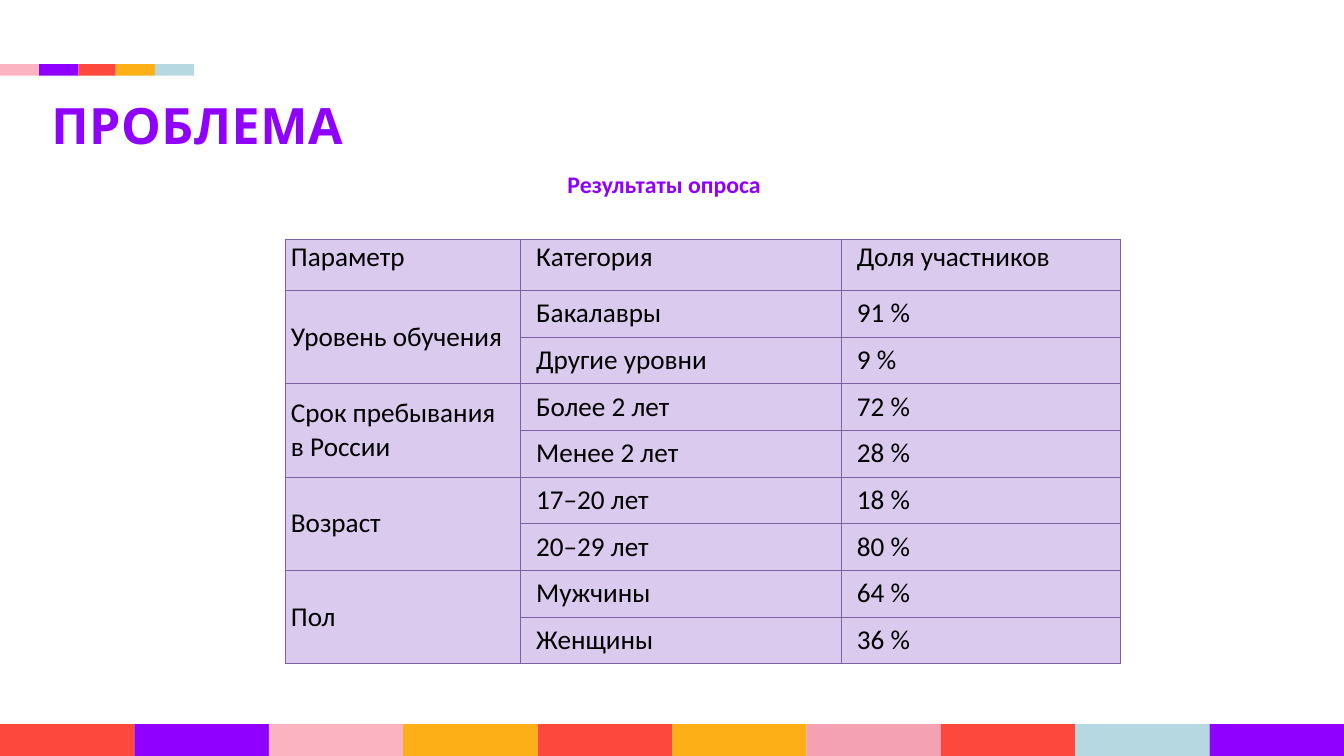
import pptx
import pptx.util
import pptx.dml.color
import pptx.enum.shapes
import pptx.enum.text
import pptx.oxml.ns
from lxml import etree

Cm, Pt = pptx.util.Cm, pptx.util.Pt
Text = pptx.enum.text

HEX = {
    "red": "FD493D", "violet": "8F00FF", "pink": "FBB3C1", "rose": "F4A1B3",
    "amber": "FCAF17", "sky": "B5D8E1", "lilac": "D9CAEE", "rule": "7D60A0",
    "black": "000000",
}
TITLE = "ПРОБЛЕМА"
LABEL = "Результаты опроса"
HEAD = ("Параметр", "Категория", "Доля участников")
GROUPS = [
    ("Уровень обучения", [("Бакалавры", "91 %"), ("Другие уровни", "9 %")]),
    ("Срок пребывания в России", [("Более 2 лет", "72 %"), ("Менее 2 лет", "28 %")]),
    ("Возраст", [("17–20 лет", "18 %"), ("20–29 лет", "80 %")]),
    ("Пол", [("Мужчины", "64 %"), ("Женщины", "36 %")]),
]
STRIP = ["red", "violet", "pink", "amber", "red", "amber", "rose", "red", "sky", "violet"]
ACCENT = [("pink", 1.63), ("violet", 1.63), ("red", 1.55), ("amber", 1.63), ("sky", 1.63)]
WIDE, HIGH = 55.85, 31.42
COLS = (9.8, 13.33, 11.58)
HEAD_H, ROW_H = 2.13, 1.94


def color(name):
    return pptx.dml.color.RGBColor.from_string(HEX[name])


def place(shape, left, top, width, height):
    shape.left, shape.top = Cm(left), Cm(top)
    shape.width, shape.height = Cm(width), Cm(height)


def style(para, name, size, ink, bold=False):
    for run in para.runs:
        run.font.name, run.font.size, run.font.bold = name, Pt(size), bold
        run.font.color.rgb = color(ink)


def inset(box, left, top, right, bottom):
    box.margin_left, box.margin_top = Cm(left), Cm(top)
    box.margin_right, box.margin_bottom = Cm(right), Cm(bottom)


def band(slide, tiles, top, height):
    left = 0
    for name, width in tiles:
        tile = slide.shapes.add_shape(
            pptx.enum.shapes.MSO_SHAPE.RECTANGLE,
            Cm(left), Cm(top), Cm(width), Cm(height))
        tile.shadow.inherit = False
        tile.fill.solid()
        tile.fill.fore_color.rgb = color(name)
        tile.line.fill.background()
        left += width


def border(cell):
    props = cell._tc.get_or_add_tcPr()
    for spot, side in enumerate(("lnL", "lnR", "lnT", "lnB")):
        line = etree.Element(pptx.oxml.ns.qn("a:" + side), w=str(Pt(0.75)))
        fill = etree.SubElement(line, pptx.oxml.ns.qn("a:solidFill"))
        etree.SubElement(fill, pptx.oxml.ns.qn("a:srgbClr"), val=HEX["rule"])
        props.insert(spot, line)


def fill_cell(cell, text, col, row):
    cell.text_frame.text = text
    cell.vertical_anchor = Text.MSO_ANCHOR.MIDDLE
    inset(cell, 0.64 if col else 0.25, 0.2, 0.64, 0.2)
    cell.fill.solid()
    cell.fill.fore_color.rgb = color("lilac")
    border(cell)
    para = cell.text_frame.paragraphs[0]
    if row == 0:
        para.line_spacing = Pt(21)
    style(para, "Calibri", 32, "black")


def main():
    deck = pptx.Presentation()
    deck.slide_width, deck.slide_height = Cm(WIDE), Cm(HIGH)
    slide = deck.slides.add_slide(deck.slide_layouts[5])

    # Colour bands
    band(slide, [(name, WIDE / len(STRIP)) for name in STRIP], 30.1, 1.32)
    band(slide, ACCENT, 2.67, 0.48)

    # Title
    title = slide.shapes.title
    place(title, 2.03, 3.86, 16.99, 2.69)
    frame = title.text_frame
    frame.text = TITLE
    frame.vertical_anchor = Text.MSO_ANCHOR.TOP
    frame.auto_size = Text.MSO_AUTO_SIZE.SHAPE_TO_FIT_TEXT
    inset(frame, 0.1, 0.38, 0.1, 0.1)
    para = frame.paragraphs[0]
    para.alignment = Text.PP_ALIGN.LEFT
    para.line_spacing = Pt(61.9)
    style(para, "Karla", 59, "violet", True)
    para.runs[0].font._element.set("spc", "60")

    # Table label
    label = slide.shapes.add_textbox(Cm(2.03), Cm(6.91), Cm(51.13), Cm(2.64))
    frame = label.text_frame
    frame.text = LABEL
    frame.word_wrap = True
    frame.auto_size = Text.MSO_AUTO_SIZE.SHAPE_TO_FIT_TEXT
    para = frame.paragraphs[0]
    para.alignment = Text.PP_ALIGN.CENTER
    style(para, "Calibri", 28, "violet", True)

    # Survey table
    rows = [HEAD]
    for name, pairs in GROUPS:
        for spot, pair in enumerate(pairs):
            rows.append(("" if spot else name, *pair))
    heights = [HEAD_H] + [ROW_H] * (len(rows) - 1)
    table = slide.shapes.add_table(
        len(rows), len(COLS), Cm(11.84), Cm(9.93), Cm(sum(COLS)), Cm(sum(heights))).table
    for col, width in enumerate(COLS):
        table.columns[col].width = Cm(width)
    for row, texts in enumerate(rows):
        table.rows[row].height = Cm(heights[row])
        for col, text in enumerate(texts):
            fill_cell(table.cell(row, col), text, col, row)
    top = 1
    for name, pairs in GROUPS:
        end = top + len(pairs)
        table.cell(top, 0).merge(table.cell(end - 1, 0))
        top = end

    deck.save("out.pptx")


if __name__ == "__main__":
    main()
